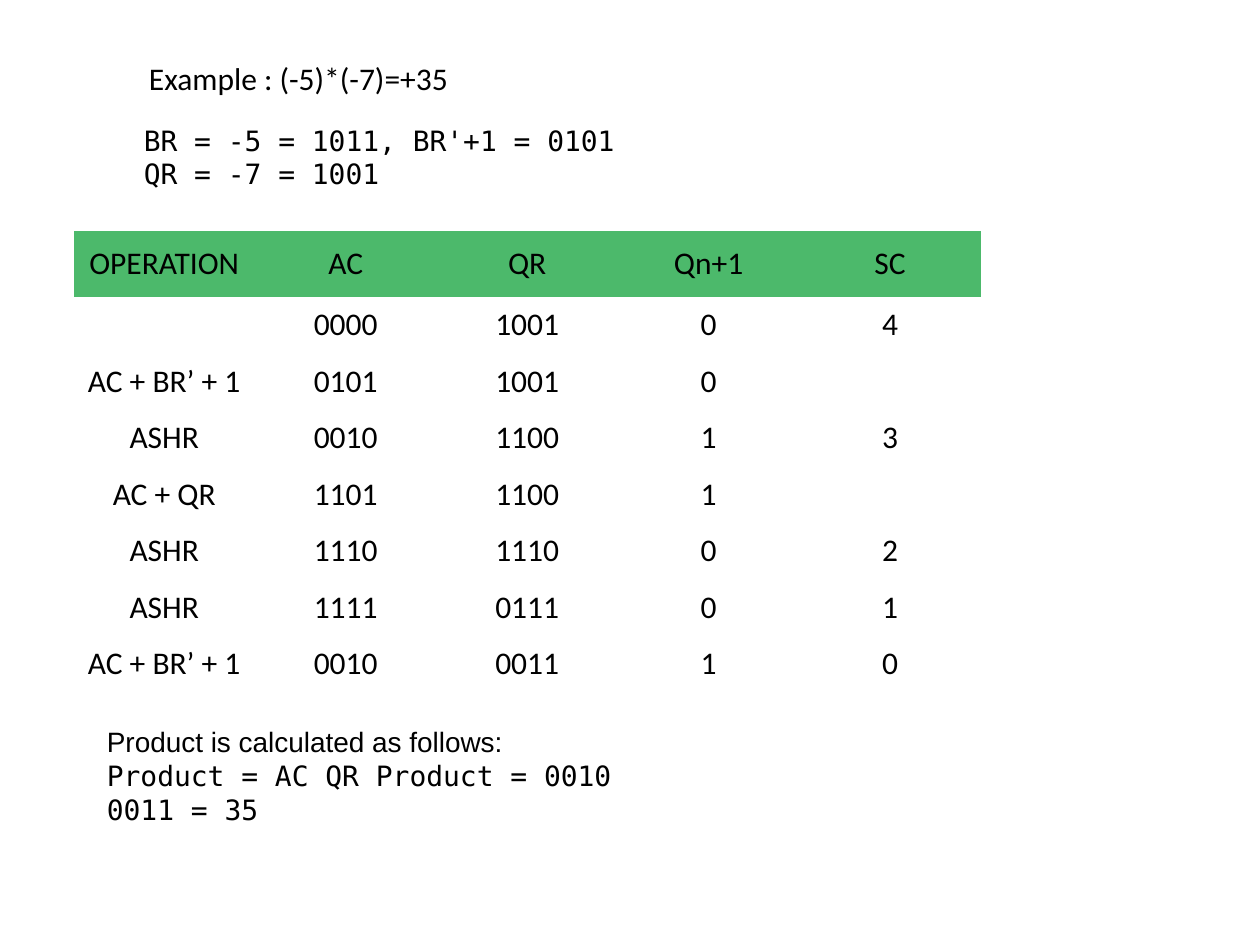
from pptx import Presentation
from pptx.dml.color import RGBColor
from pptx.enum.text import MSO_ANCHOR as Anchor, PP_ALIGN as Align
from pptx.util import Pt

BLACK, GREEN = "000000", "4CB96B"
SANS, ARIAL, MONO = "Calibri", "Arial", "DejaVu Sans Mono"
NO_STYLE = "{2D5ABB26-0587-4C30-8999-92F81FD0307C}"

# left, top, width, height, left inset, anchor, lines of (text, font, size)
TEXTS = [
    (3, 46.8, 720, 65.5, 79.2, Anchor.BOTTOM, [
        ("BR = -5 = 1011, BR'+1 = 0101", MONO, 16),
        ("QR = -7 = 1001", MONO, 16)]),
    (54, 420, 348, 46, 7.2, Anchor.MIDDLE, [
        ("Product is calculated as follows:", ARIAL, 16),
        ("Product = AC QR Product = 0010 0011 = 35", MONO, 16)]),
    (78, 30, 240, 29, 7.2, Anchor.TOP, [
        ("Example : (-5)*(-7)=+35", SANS, 18)]),
]
STEPS = [
    ("OPERATION", "AC", "QR", "Qn+1", "SC"),
    ("", "0000", "1001", "0", "4"),
    ("AC + BR’ + 1", "0101", "1001", "0", ""),
    ("ASHR", "0010", "1100", "1", "3"),
    ("AC + QR", "1101", "1100", "1", ""),
    ("ASHR", "1110", "1110", "0", "2"),
    ("ASHR", "1111", "0111", "0", "1"),
    ("AC + BR’ + 1", "0010", "0011", "1", "0"),
]
TABLE_LEFT, TABLE_TOP = 42, 132
COLUMN_WIDTH, HEADER_HEIGHT, ROW_HEIGHT = 103.7, 37.6, 32.3


def color(value):
    return RGBColor.from_string(value)


def add_span(para, text, font, size):
    span = para.add_run()
    span.text = text
    span.font.name, span.font.size = font, Pt(size)
    span.font.color.rgb = color(BLACK)


def add_text(page, left, top, width, height, inset, anchor, lines):
    box = page.shapes.add_textbox(Pt(left), Pt(top), Pt(width), Pt(height))
    frame = box.text_frame
    frame.word_wrap = True
    frame.margin_left = Pt(inset)
    frame.vertical_anchor = anchor
    for index, line in enumerate(lines):
        para = frame.add_paragraph() if index else frame.paragraphs[0]
        add_span(para, *line)


def add_steps(page):
    heights = [HEADER_HEIGHT] + [ROW_HEIGHT] * (len(STEPS) - 1)
    columns = len(STEPS[0])
    table = page.shapes.add_table(
        len(STEPS), columns, Pt(TABLE_LEFT), Pt(TABLE_TOP),
        Pt(COLUMN_WIDTH * columns), Pt(sum(heights))).table
    table.first_row = table.horz_banding = False
    table._tbl.tblPr[0].text = NO_STYLE
    for column in table.columns:
        column.width = Pt(COLUMN_WIDTH)
    for r, (height, values) in enumerate(zip(heights, STEPS)):
        table.rows[r].height = Pt(height)
        for c, value in enumerate(values):
            cell = table.cell(r, c)
            cell.vertical_anchor = Anchor.MIDDLE
            if r == 0:
                cell.fill.solid()
                cell.fill.fore_color.rgb = color(GREEN)
                cell.margin_left = cell.margin_right = Pt(6)
                cell.margin_top = cell.margin_bottom = Pt(6)
            else:
                cell.fill.background()
            para = cell.text_frame.paragraphs[0]
            para.alignment = Align.CENTER
            if value:
                add_span(para, value, SANS, 18)


def main():
    deck = Presentation()
    deck.slide_width, deck.slide_height = Pt(720), Pt(540)
    page = deck.slides.add_slide(deck.slide_layouts[6])
    add_steps(page)
    for text in TEXTS:
        add_text(page, *text)
    deck.save("out.pptx")


if __name__ == "__main__":
    main()
